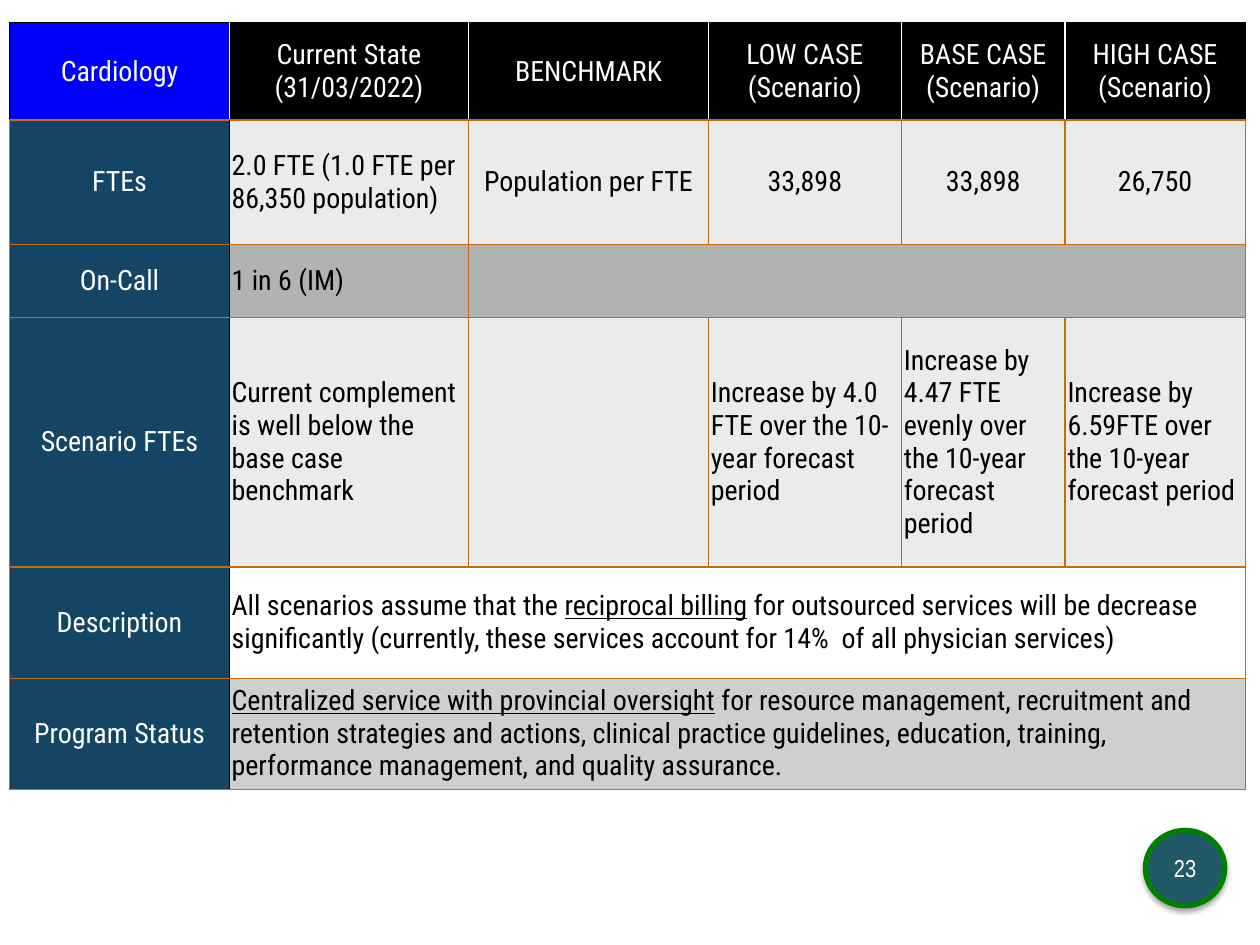
import dataclasses

import pptx
import pptx.dml.color
import pptx.enum.shapes
import pptx.enum.text
import pptx.oxml
import pptx.oxml.ns
import pptx.util
from pptx.util import Cm

WHITE, BLACK, ORANGE = "FFFFFF", "000000", "C56B12"
NAVY, LIGHT, MIDDLE, PALE = "144565", "EBEBEB", "B2B2B2", "CFCFCF"
COLUMN_WIDTHS = [4.42, 4.83, 4.83, 3.89, 3.3, 3.63]
NAMESPACE = pptx.oxml.ns.nsdecls("a")


@dataclasses.dataclass
class Row:
    height: float
    fill: str | None
    label: str
    texts: list[str]
    centred_from: int = 6
    merge_from: int | None = None


HEADER = Row(1.96, BLACK, "Cardiology", [
    "Current State (31/03/2022)", "BENCHMARK", "LOW CASE\n(Scenario)",
    "BASE CASE\n(Scenario)", "HIGH CASE (Scenario)"], centred_from=1)
# Underscores enclose underlined words.
BODY = [
    Row(2.51, LIGHT, "FTEs", [
        "2.0 FTE (1.0 FTE per 86,350 population)", "Population per FTE",
        "33,898", "33,898", "26,750"], centred_from=2),
    Row(1.47, MIDDLE, "On-Call", ["1 in 6 (IM)"], merge_from=2),
    Row(5.03, LIGHT, "Scenario FTEs", [
        "Current complement is well below the base case benchmark", "",
        "Increase by 4.0 FTE over the 10-year forecast period",
        "Increase by 4.47 FTE evenly over the 10-year forecast period",
        "Increase by 6.59FTE over the 10-year forecast period"]),
    Row(2.24, None, "Description", [
        "All scenarios assume that the _reciprocal billing_ for outsourced services "
        "will be decrease significantly (currently, these services account for "
        "14%  of all physician services)"], merge_from=1),
    Row(2.24, PALE, "Program Status", [
        "_Centralized service with provincial oversight_ for resource management, "
        "recruitment and retention strategies and actions, clinical practice "
        "guidelines, education, training, performance management, and quality "
        "assurance."], merge_from=1),
]


def rgb(value: str) -> pptx.dml.color.RGBColor:
    return pptx.dml.color.RGBColor.from_string(value)


def write_text(frame, text: str, *, color: str, size: float = 16,
               font: str = "Roboto Condensed", centred: bool = True) -> None:
    """Write one paragraph per line, underlining words between underscores."""
    alignment = pptx.enum.text.PP_ALIGN
    for number, line in enumerate(text.split("\n")):
        paragraph = frame.add_paragraph() if number else frame.paragraphs[0]
        paragraph.alignment = alignment.CENTER if centred else alignment.LEFT
        paragraph.font.size = pptx.util.Pt(size)
        for index, part in enumerate(line.split("_")):
            if not part:
                continue
            run = paragraph.add_run()
            run.text = part
            run.font.name = font
            run.font.size = pptx.util.Pt(size)
            run.font.color.rgb = rgb(color)
            if index % 2:
                run.font.underline = True


def set_borders(cell, left: str, right: str, top: str, bottom: str) -> None:
    properties = cell._tc.get_or_add_tcPr()
    sides = zip("LRTB", (left, right, top, bottom))
    for position, (side, color) in enumerate(sides):
        properties.insert(position, pptx.oxml.parse_xml(
            f'<a:ln{side} {NAMESPACE} w="9525"><a:solidFill>'
            f'<a:srgbClr val="{color}"/></a:solidFill></a:ln{side}>'))


def format_cell(cell, fill: str | None) -> None:
    cell.margin_left = cell.margin_right = Cm(0.05)
    cell.margin_top = cell.margin_bottom = 0
    cell.vertical_anchor = pptx.enum.text.MSO_ANCHOR.MIDDLE
    if fill:
        cell.fill.solid()
        cell.fill.fore_color.rgb = rgb(fill)
    else:
        cell.fill.background()


def fill_row(table, number: int, row: Row) -> None:
    is_header = row is HEADER
    last = len(COLUMN_WIDTHS) - 1
    table.rows[number].height = Cm(row.height)
    for column in range(last + 1):
        cell = table.cell(number, column)
        if is_header:
            format_cell(cell, row.fill if column else "0000FF")
            set_borders(cell, WHITE if column else BLACK,
                        WHITE if column < last else BLACK, BLACK, ORANGE)
        else:
            format_cell(cell, row.fill if column else NAVY)
            set_borders(cell, BLACK if column == 1 else ORANGE,
                        ORANGE if column else BLACK, ORANGE, ORANGE)
    if row.merge_from is not None:
        table.cell(number, row.merge_from).merge(table.cell(number, last))
    for column, text in enumerate([row.label, *row.texts]):
        write_text(table.cell(number, column).text_frame, text,
                   color=WHITE if is_header or column == 0 else BLACK,
                   centred=column == 0 or column >= row.centred_from)


def add_staffing_table(slide) -> None:
    rows = [HEADER, *BODY]
    table = slide.shapes.add_table(
        len(rows), len(COLUMN_WIDTHS), Cm(0.2), Cm(0.46),
        Cm(sum(COLUMN_WIDTHS)), Cm(sum(row.height for row in rows))).table
    table.first_row = table.horz_banding = False
    for column, width in zip(table.columns, COLUMN_WIDTHS):
        column.width = Cm(width)
    for number, row in enumerate(rows):
        fill_row(table, number, row)


def add_page_badge(slide, text: str) -> None:
    shape = slide.shapes.add_shape(
        pptx.enum.shapes.MSO_SHAPE.OVAL, Cm(23.09), Cm(16.74), Cm(1.6), Cm(1.52))
    shape.fill.solid()
    shape.fill.fore_color.rgb = rgb("215968")
    shape.line.color.rgb = rgb("008000")
    shape.line.width = pptx.util.Pt(3)
    shape._element.spPr.append(pptx.oxml.parse_xml(
        f'<a:effectLst {NAMESPACE}><a:outerShdw blurRad="40000" dist="23000" '
        'dir="5400000" rotWithShape="0"><a:srgbClr val="000000">'
        '<a:alpha val="35000"/></a:srgbClr></a:outerShdw></a:effectLst>'))
    frame = shape.text_frame
    frame.margin_left = frame.margin_right = 0
    frame.margin_top = frame.margin_bottom = 0
    frame.vertical_anchor = pptx.enum.text.MSO_ANCHOR.MIDDLE
    write_text(frame, text, color=WHITE, size=14, font="Arial Narrow")


def main() -> None:
    presentation = pptx.Presentation()
    presentation.slide_width, presentation.slide_height = Cm(25.4), Cm(19.05)
    slide = presentation.slides.add_slide(presentation.slide_layouts[6])
    add_page_badge(slide, "23")
    add_staffing_table(slide)
    presentation.save("out.pptx")


if __name__ == "__main__":
    main()
